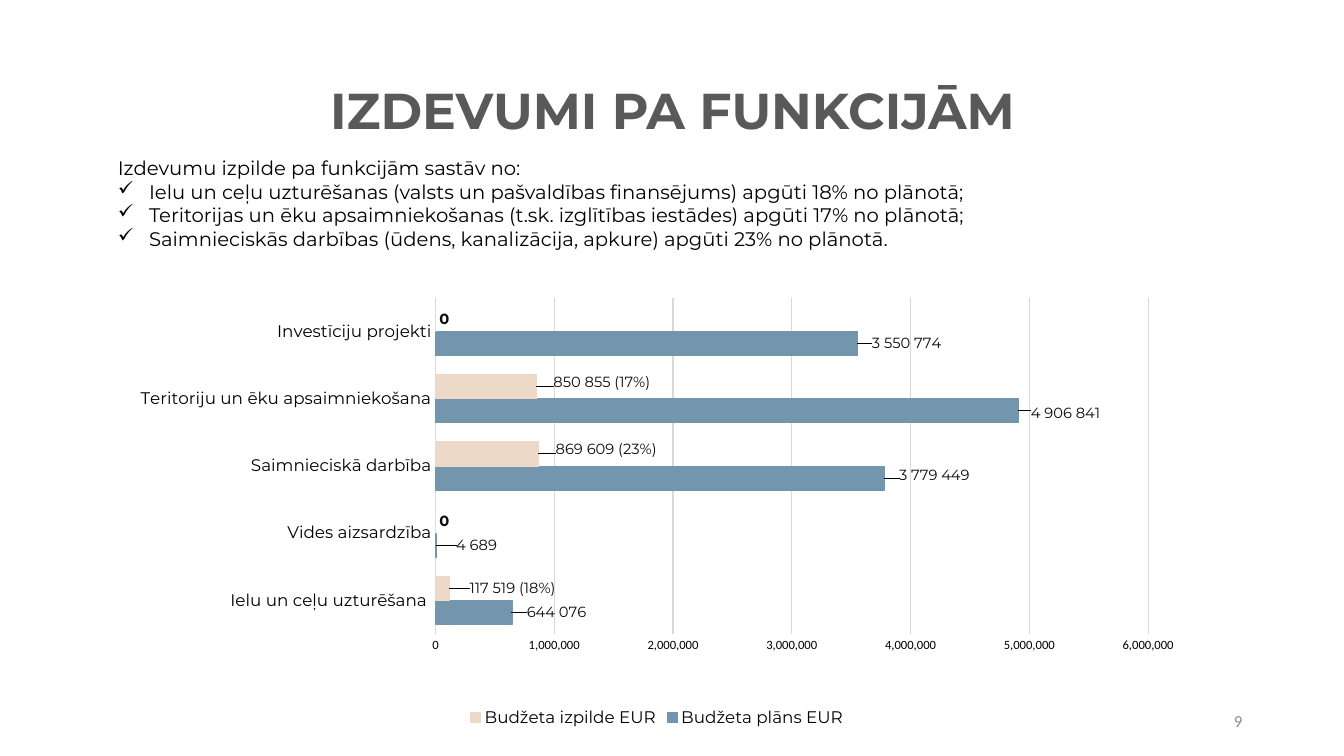
from lxml import etree
from pptx import Presentation
from pptx.chart.data import CategoryChartData
from pptx.dml.color import RGBColor
from pptx.enum.chart import (XL_CHART_TYPE, XL_LABEL_POSITION,
                             XL_LEGEND_POSITION, XL_TICK_MARK)
from pptx.enum.text import MSO_ANCHOR, PP_ALIGN
from pptx.oxml import parse_xml
from pptx.oxml.ns import nsdecls, qn
from pptx.util import Inches, Pt

COLORS = {
    "background": "FFFFFF", "title": "595959", "text": "000000",
    "number": "8C8C8C", "label": "0D0D0D", "grid": "D9D9D9",
    "plan": "7395AD", "actual": "ECD9C8",
}
HEADING_FONT, NUMBER_FONT = "Montserrat", "Calibri"

INTRO = "Izdevumu izpilde pa funkcijām sastāv no:"
FINDINGS = [
    "Ielu un ceļu uzturēšanas (valsts un pašvaldības finansējums) apgūti 18% no plānotā;",
    "Teritorijas un ēku apsaimniekošanas (t.sk. izglītības iestādes) apgūti 17% no plānotā;",
    "Saimnieciskās darbības (ūdens, kanalizācija, apkure) apgūti 23% no plānotā.",
]
FUNCTIONS = ["Ielu un ceļu uzturēšana ", "Vides aizsardzība", "Saimnieciskā darbība",
             "Teritoriju un ēku apsaimniekošana", "Investīciju projekti"]
# Each label: category index -> (text, x shift, y shift) as shares of the chart
BUDGET = [
    ("Budžeta plāns EUR", "plan", [644076, 4689, 3779449, 4906841, 3550774], {
        0: ("644 076", 0.01, 0), 1: ("4 689", 0.015, 0),
        2: ("3 779 449", 0.01, -0.005), 3: ("4 906 841", 0.008, 0.005),
        4: ("3 550 774", 0.01, 0)}),
    ("Budžeta izpilde EUR", "actual", [117519, 0, 869609, 850855, 0], {
        0: ("117 519 (18%)", 0.015, 0), 2: ("869 609 (23%)", 0.012, -0.01),
        3: ("850 855 (17%)", 0.012, -0.01)}),
]


def rgb(name):
    return RGBColor.from_string(COLORS[name])


def style_font(font, size, color="text", name=HEADING_FONT, bold=False):
    font.size, font.name, font.bold = Pt(size), name, bold
    font.color.rgb = rgb(color)


def add_text(slide, box, lines, align, anchor=MSO_ANCHOR.TOP, **font):
    frame = slide.shapes.add_textbox(*map(Inches, box)).text_frame
    frame.word_wrap = True
    frame.vertical_anchor = anchor
    for index, line in enumerate(lines):
        paragraph = frame.paragraphs[0] if index == 0 else frame.add_paragraph()
        paragraph.alignment = align
        run = paragraph.add_run()
        run.text = line
        style_font(run.font, **font)
    return frame


def add_check_mark(paragraph):
    properties = paragraph._p.get_or_add_pPr()
    indent = Inches(0.31)
    properties.set("marL", str(indent))
    properties.set("indent", str(-indent))
    etree.SubElement(properties, qn("a:buFont")).set("typeface", "Wingdings")
    etree.SubElement(properties, qn("a:buChar")).set("char", "ü")


def manual_layout(x, y, size=None):
    """Layout of an inner plot area if size is given, else a label's shift."""
    parts = [("x", x), ("y", y)]
    if size:
        parts = [("layoutTarget", "inner"), ("xMode", "edge"), ("yMode", "edge"),
                 *parts, ("w", size[0]), ("h", size[1])]
    children = "".join(f'<c:{tag} val="{value}"/>' for tag, value in parts)
    return parse_xml(f'<c:layout {nsdecls("c")}><c:manualLayout>{children}'
                     '</c:manualLayout></c:layout>')


def place_plot_area(chart):
    plot_area = chart.element.find(".//" + qn("c:plotArea"))
    for layout in plot_area.findall(qn("c:layout")):
        plot_area.remove(layout)
    plot_area.insert(0, manual_layout(0.295, 0.065, (0.66, 0.724)))


def style_series(series, color, labels):
    for fill in (series.format.fill, series.format.line.fill):
        fill.solid()
        fill.fore_color.rgb = rgb(color)
    series.format.line.width = Pt(0.75)
    series.invert_if_negative = False
    values = series.data_labels
    values.show_value = True
    values.number_format, values.number_format_is_linked = "#,##0", False
    values.position = XL_LABEL_POSITION.OUTSIDE_END
    style_font(values.font, 10.5, "label", bold=True)
    for index, (text, x, y) in labels.items():
        label = series.points[index].data_label
        run = label.text_frame.paragraphs[0].add_run()
        run.text = text
        style_font(run.font, 10.5, "label")
        label.position = XL_LABEL_POSITION.OUTSIDE_END
        label.text_frame._element.getparent().addprevious(manual_layout(x, y))


def style_axes(chart):
    for axis in (chart.category_axis, chart.value_axis):
        axis.major_tick_mark = axis.minor_tick_mark = XL_TICK_MARK.NONE
        axis.format.line.fill.background()
    style_font(chart.category_axis.tick_labels.font, 12)
    amounts = chart.value_axis
    amounts.minimum_scale, amounts.maximum_scale = 0, 6000000
    amounts.major_unit = 1000000
    amounts.tick_labels.number_format = "#,##0"
    amounts.tick_labels.number_format_is_linked = False
    style_font(amounts.tick_labels.font, 9, name=NUMBER_FONT)
    amounts.has_major_gridlines = True
    amounts.major_gridlines.format.line.color.rgb = rgb("grid")
    amounts.major_gridlines.format.line.width = Pt(0.75)


def add_budget_chart(slide, box):
    data = CategoryChartData(number_format="#,##0")
    data.categories = FUNCTIONS
    for name, _, values, _ in BUDGET:
        data.add_series(name, values)
    chart = slide.shapes.add_chart(
        XL_CHART_TYPE.BAR_CLUSTERED, *map(Inches, box), data).chart
    chart.has_title = False
    style_font(chart.font, 10, name=NUMBER_FONT)
    plot = chart.plots[0]
    plot.gap_width, plot.overlap, plot.vary_by_categories = 80, 0, False
    for series, (_, color, _, labels) in zip(plot.series, BUDGET):
        style_series(series, color, labels)
    style_axes(chart)
    chart.has_legend = True
    chart.legend.position = XL_LEGEND_POSITION.BOTTOM
    chart.legend.include_in_layout = False
    style_font(chart.legend.font, 12)
    place_plot_area(chart)


def main():
    presentation = Presentation()
    presentation.slide_width, presentation.slide_height = Inches(13.33), Inches(7.5)
    slide = presentation.slides.add_slide(presentation.slide_layouts[6])
    slide.background.fill.solid()
    slide.background.fill.fore_color.rgb = rgb("background")

    title = add_text(slide, (0.92, 0.4, 11.5, 1.45), ["IZDEVUMI PA FUNKCIJĀM"],
                     PP_ALIGN.CENTER, MSO_ANCHOR.MIDDLE,
                     size=36, color="title", bold=True)
    title.paragraphs[0].line_spacing = 0.9
    add_text(slide, (9.42, 6.95, 3, 0.4), ["9"], PP_ALIGN.RIGHT, MSO_ANCHOR.MIDDLE,
             size=12, color="number", name=NUMBER_FONT)
    add_budget_chart(slide, (1.16, 2.66, 10.71, 4.6))
    summary = add_text(slide, (1.07, 1.5, 11.5, 1.04), [INTRO, *FINDINGS],
                       PP_ALIGN.JUSTIFY, size=14)
    for finding in summary.paragraphs[1:]:
        add_check_mark(finding)
    presentation.save("out.pptx")


if __name__ == "__main__":
    main()
